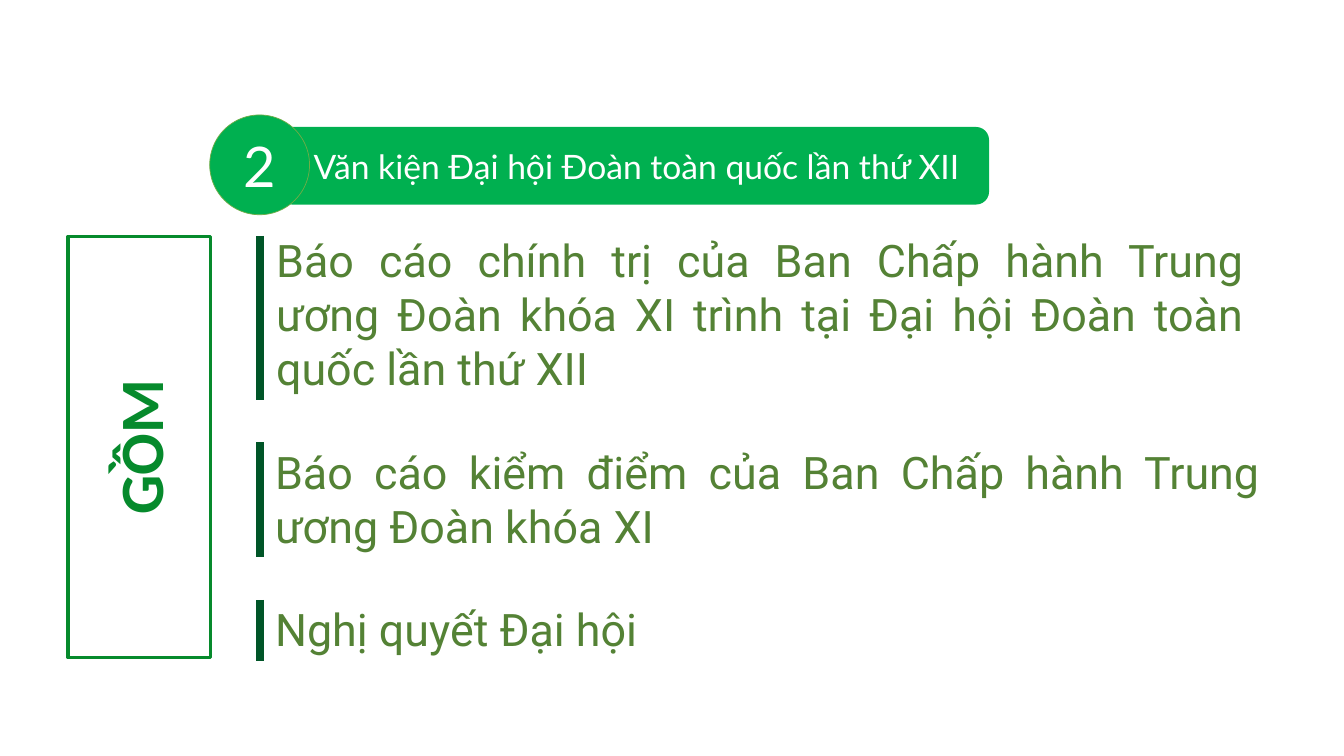
import dataclasses

import lxml.etree
import pptx
import pptx.dml.color
import pptx.enum.shapes
import pptx.enum.text
import pptx.oxml.ns
import pptx.util

Inches = pptx.util.Inches
Pt = pptx.util.Pt
SHAPE = pptx.enum.shapes.MSO_SHAPE
ALIGN = pptx.enum.text.PP_ALIGN
ANCHOR = pptx.enum.text.MSO_ANCHOR
FIT = pptx.enum.text.MSO_AUTO_SIZE

COLORS = {
    "banner": "00B050",
    "badge_line": "70AD47",
    "frame": "068A2C",
    "bar": "005528",
    "body": "548235",
    "white": "FFFFFF",
}
FORMATS = {
    "title": {"name": "Lato", "size": Pt(24), "bold": False},
    "badge": {"name": "Lato", "size": Pt(40)},
    "body": {"name": "Roboto", "size": Pt(32)},
    "frame": {"name": "Calibri", "size": Pt(44), "bold": True},
}
BAR_X = 2.58


@dataclasses.dataclass
class Box:
    left: float
    top: float
    width: float
    height: float

    def lengths(self) -> list[int]:
        return [Inches(v) for v in (self.left, self.top, self.width, self.height)]


@dataclasses.dataclass
class Document:
    text: str
    box: Box
    bar_top: float
    bar_bottom: float


BANNER = Box(2.77, 1.26, 7.04, 0.77)
DOCUMENTS = [
    Document("Báo cáo chính trị của Ban Chấp hành Trung ương Đoàn khóa XI "
             "trình tại Đại hội Đoàn toàn quốc lần thứ XII",
             Box(2.64, 2.26, 9.8, 1.72), 2.34, 3.97),
    Document("Báo cáo kiểm điểm của Ban Chấp hành Trung ương Đoàn khóa XI",
             Box(2.63, 4.36, 9.97, 1.18), 4.39, 5.53),
    Document("Nghị quyết Đại hội", Box(2.63, 5.92, 8.82, 0.64), 5.95, 6.56),
]


def rgb(name: str) -> pptx.dml.color.RGBColor:
    return pptx.dml.color.RGBColor.from_string(COLORS[name])


def write(sp, text: str, style: str, color: str, align, anchor) -> None:
    tf = sp.text_frame
    tf.word_wrap = True
    tf.vertical_anchor = anchor
    p = tf.paragraphs[0]
    p.alignment = align
    r = p.add_run()
    r.text = text
    for key, value in FORMATS[style].items():
        setattr(r.font, key, value)
    r.font.color.rgb = rgb(color)


def add_shape(slide, kind, box: Box, fill: str = "", line: str = "", width: float = 0):
    sp = slide.shapes.add_shape(kind, *box.lengths())
    sp.shadow.inherit = False
    if fill:
        sp.fill.solid()
        sp.fill.fore_color.rgb = rgb(fill)
    else:
        sp.fill.background()
    if line:
        sp.line.color.rgb = rgb(line)
        sp.line.width = Pt(width)
    else:
        sp.line.fill.background()
    return sp


def add_header(slide) -> None:
    banner = add_shape(slide, SHAPE.ROUNDED_RECTANGLE, BANNER, "banner")
    # The title sits on the banner, clear of the badge
    title = slide.shapes.title
    banner._element.addnext(title._element)
    title.left, title.top, title.width, title.height = BANNER.lengths()
    title.text_frame.auto_size = FIT.NONE
    title.text_frame.margin_left = Inches(0.34)
    write(title, "Văn kiện Đại hội Đoàn toàn quốc lần thứ XII",
          "title", "white", ALIGN.LEFT, ANCHOR.MIDDLE)

    badge = add_shape(slide, SHAPE.OVAL, Box(2.08, 1.14, 0.99, 0.99),
                      "banner", "badge_line", 0.5)
    write(badge, "2", "badge", "white", ALIGN.CENTER, ANCHOR.MIDDLE)


def add_document(slide, doc: Document) -> None:
    sp = slide.shapes.add_textbox(*doc.box.lengths())
    write(sp, doc.text, "body", "body", ALIGN.JUSTIFY, ANCHOR.TOP)
    sp.text_frame.auto_size = FIT.SHAPE_TO_FIT_TEXT

    bar = slide.shapes.add_connector(
        pptx.enum.shapes.MSO_CONNECTOR.STRAIGHT,
        Inches(BAR_X), Inches(doc.bar_top), Inches(BAR_X), Inches(doc.bar_bottom))
    bar.line.color.rgb = rgb("bar")
    bar.line.width = Pt(6)
    lxml.etree.SubElement(bar._element.spPr, pptx.oxml.ns.qn("a:effectLst"))


def main() -> None:
    prs = pptx.Presentation()
    prs.slide_width, prs.slide_height = Inches(13.33), Inches(7.5)
    slide = prs.slides.add_slide(prs.slide_layouts[5])

    # Numbered header
    add_header(slide)

    # Documents, each with a bar on its left
    for doc in DOCUMENTS:
        add_document(slide, doc)

    # Vertical label
    frame = add_shape(slide, SHAPE.RECTANGLE, Box(-0.71, 3.73, 4.18, 1.41),
                      line="frame", width=2.25)
    frame.rotation = 270
    write(frame, "GỒM", "frame", "frame", ALIGN.CENTER, ANCHOR.MIDDLE)

    prs.save("out.pptx")


if __name__ == "__main__":
    main()
